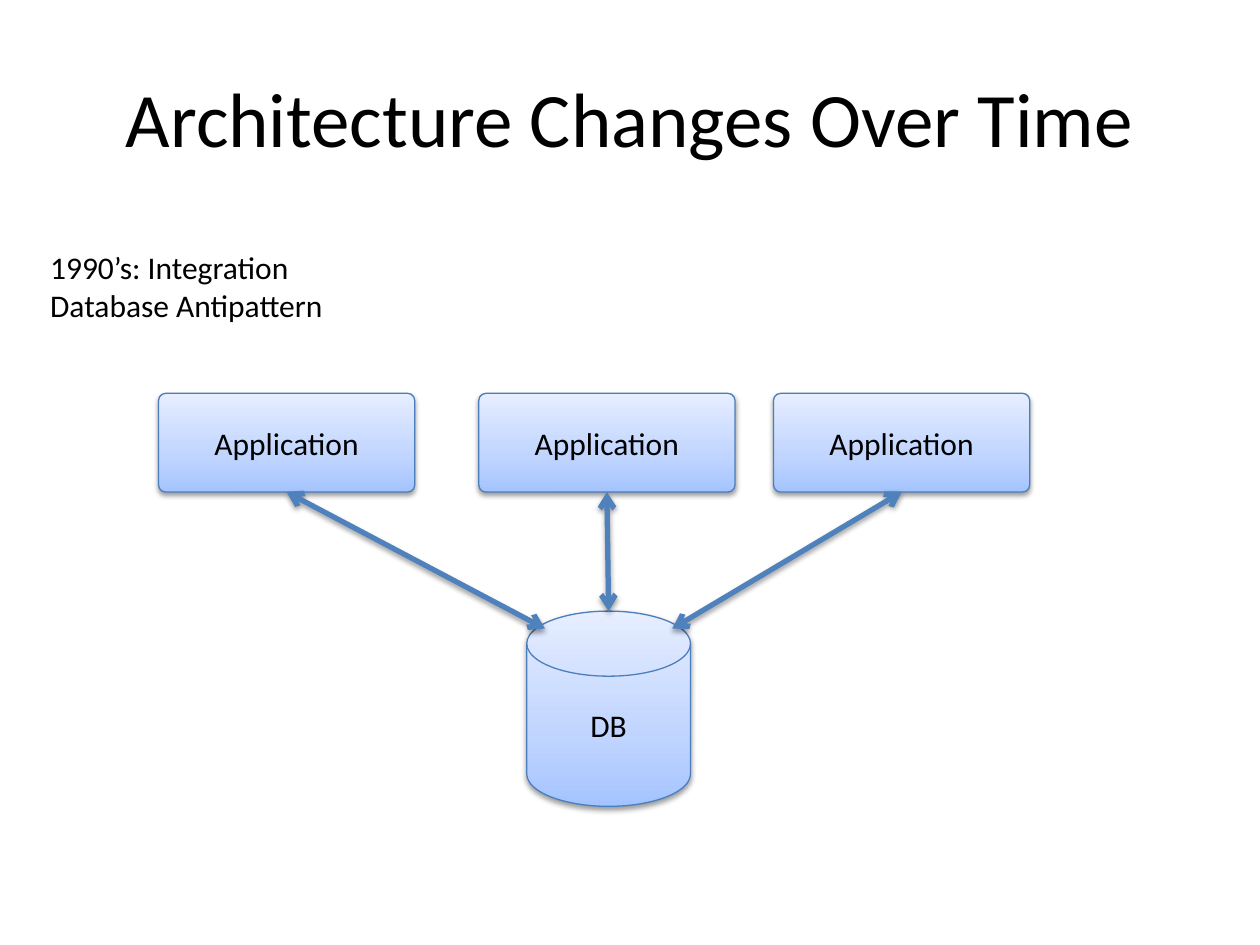
from lxml import etree
from pptx import Presentation
from pptx.dml.color import RGBColor
from pptx.enum.shapes import MSO_CONNECTOR, MSO_SHAPE
from pptx.enum.text import MSO_ANCHOR, MSO_AUTO_SIZE, PP_ALIGN
from pptx.oxml.ns import qn
from pptx.util import Pt

TITLE_ONLY = 5
ROUNDED = MSO_SHAPE.ROUNDED_RECTANGLE
DISK = MSO_SHAPE.FLOWCHART_MAGNETIC_DISK
STRAIGHT = MSO_CONNECTOR.STRAIGHT
MIDDLE, TOP = MSO_ANCHOR.MIDDLE, MSO_ANCHOR.TOP
CENTER, LEFT = PP_ALIGN.CENTER, PP_ALIGN.LEFT
BOTTOM_SIDE = 2


def color(hex_text):
    return RGBColor.from_string(hex_text)


def add_child(parent, tag, **attributes):
    return etree.SubElement(parent, qn(tag), attributes)


def write_text(frame, *lines, size=18, font="Calibri", fill="000000",
               align=CENTER, anchor=MIDDLE):
    frame.vertical_anchor = anchor
    for index, line in enumerate(lines):
        para = frame.add_paragraph() if index else frame.paragraphs[0]
        para.alignment = align
        span = para.add_run()
        span.text = line
        span.font.size = Pt(size)
        span.font.name = font
        span.font.color.rgb = color(fill)


class DiagramSlide:
    outline = "4B7EBC"
    arrow_color = "4F81BD"
    gradient = [(0, "A4C4FF"), (35, "BFD4FF"), (100, "E6EEFF")]

    def __init__(self, deck):
        self.page = deck.slides.add_slide(deck.slide_layouts[TITLE_ONLY])

    def title(self, text, left, top, width, height):
        box = self.page.shapes.title
        box.left, box.top, box.width, box.height = map(Pt, (left, top, width, height))
        write_text(box.text_frame, text, size=44)

    def note(self, lines, left, top, width, height):
        box = self.page.shapes.add_textbox(*map(Pt, (left, top, width, height)))
        box.text_frame.word_wrap = False
        box.text_frame.auto_size = MSO_AUTO_SIZE.SHAPE_TO_FIT_TEXT
        write_text(box.text_frame, *lines, align=LEFT, anchor=TOP)

    def node(self, kind, text, left, top, width, height, corner=None):
        shape = self.page.shapes.add_shape(kind, *map(Pt, (left, top, width, height)))
        if corner is not None:
            shape.adjustments[0] = corner
        shape.line.color.rgb = color(self.outline)
        shape.line.width = Pt(0.75)
        self.shade(shape)
        self.drop_shadow(shape)
        write_text(shape.text_frame, text)
        return shape

    def arrow(self, box, end_x, end_y):
        """Double-headed arrow from the bottom of a box to a point."""
        line = self.page.shapes.add_connector(STRAIGHT, 0, 0, Pt(end_x), Pt(end_y))
        line.begin_connect(box, BOTTOM_SIDE)
        line.line.color.rgb = color(self.arrow_color)
        line.line.width = Pt(3)
        outline = line._element.spPr.find(qn("a:ln"))
        for end in ("a:headEnd", "a:tailEnd"):
            add_child(outline, end, type="arrow")
        self.drop_shadow(line)

    def shade(self, shape):
        """Three-stop gradient running from bottom to top."""
        fill = etree.Element(qn("a:gradFill"), rotWithShape="1")
        stops = add_child(fill, "a:gsLst")
        for percent, value in self.gradient:
            stop = add_child(stops, "a:gs", pos=str(percent * 1000))
            add_child(stop, "a:srgbClr", val=value)
        add_child(fill, "a:lin", ang=str(270 * 60000), scaled="0")
        shape._element.spPr.find(qn("a:prstGeom")).addnext(fill)

    def drop_shadow(self, shape):
        effects = add_child(shape._element.spPr, "a:effectLst")
        shadow = add_child(effects, "a:outerShdw", blurRad=str(Pt(3.1)), dist=str(Pt(1.6)),
                           dir=str(90 * 60000), rotWithShape="0")
        tint = add_child(shadow, "a:srgbClr", val="000000")
        add_child(tint, "a:alpha", val="38000")


def main():
    deck = Presentation()
    deck.slide_width, deck.slide_height = Pt(720), Pt(540)
    slide = DiagramSlide(deck)

    # Heading and era
    slide.title("Architecture Changes Over Time", 36, 21.6, 648, 90)
    slide.note(["1990’s: Integration", "Database Antipattern"], 21.6, 138.2, 172.8, 51)

    # Shared database
    disk_left, disk_top, disk_width = 301, 349.2, 93.6
    slide.node(DISK, "DB", disk_left, disk_top, disk_width, 111.6)

    # Applications, each joined to its point on the disk's rim
    center = disk_left + disk_width / 2
    reach, drop = 36.4, 10
    for left, side in ((90.6, -1), (273.6, 0), (442, 1)):
        box = slide.node(ROUNDED, "Application", left, 224.8, 146.4, 56.4, corner=0.072)
        slide.arrow(box, center + side * reach, disk_top + abs(side) * drop)

    deck.save("out.pptx")


if __name__ == "__main__":
    main()
